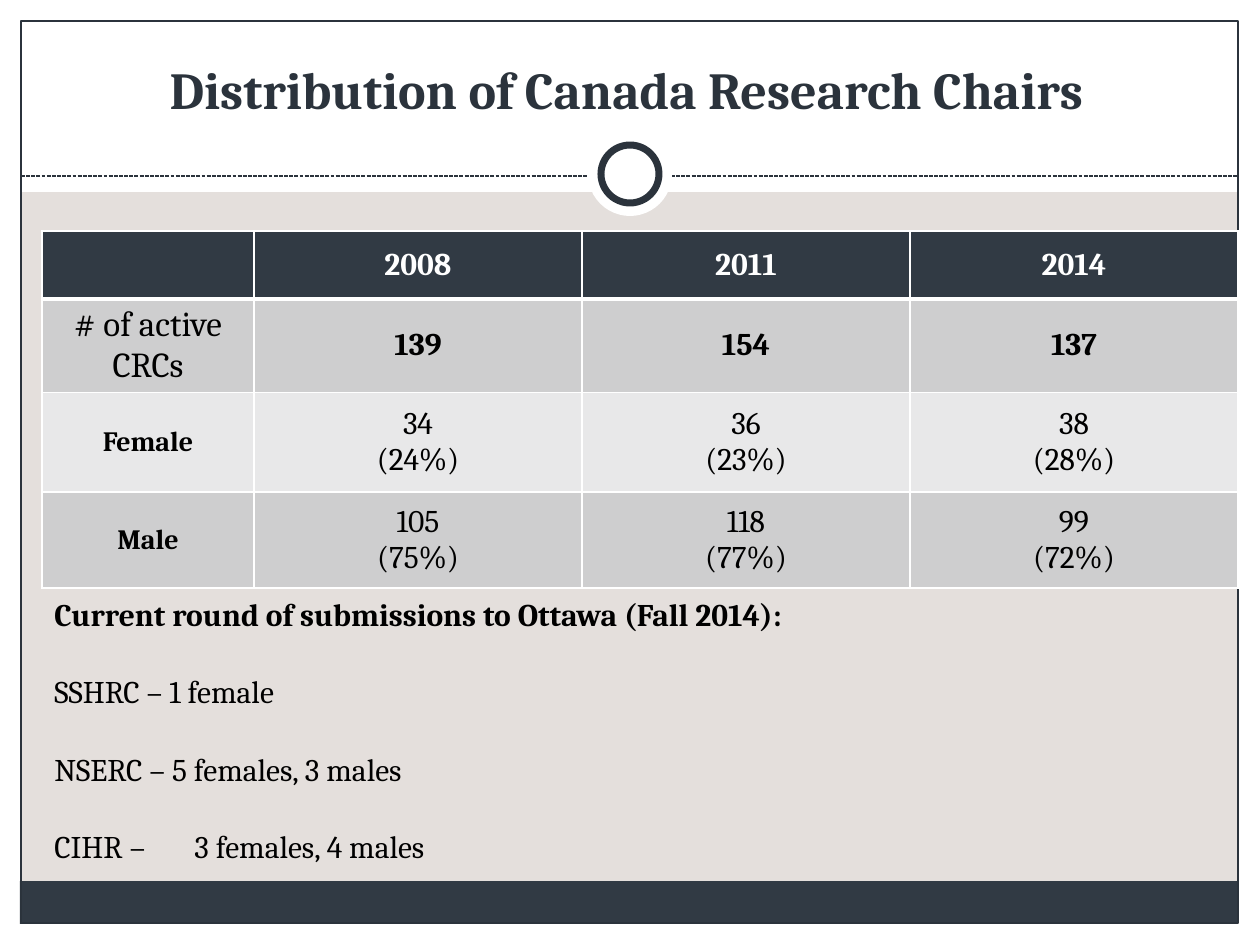
from lxml.etree import SubElement
from pptx import Presentation
from pptx.dml.color import RGBColor
from pptx.enum.dml import MSO_LINE
from pptx.enum.shapes import MSO_CONNECTOR, MSO_SHAPE
from pptx.enum.text import MSO_ANCHOR, PP_ALIGN
from pptx.oxml.ns import qn
from pptx.util import Pt

SCALE = 914400 / 126
THEME = {
    "font": "Cambria",
    "background": RGBColor.from_string("E4DFDC"),
    "white": RGBColor.from_string("FFFFFF"),
    "black": RGBColor.from_string("000000"),
    "dark": RGBColor.from_string("313A44"),
    "outline": RGBColor.from_string("2B333C"),
    "band": RGBColor.from_string("CECECF"),
    "light_band": RGBColor.from_string("E8E8E9"),
    "title_size": 29.7,
    "label_size": 20,
    "body_size": 18,
    "small_size": 16,
}


def px(*lengths):
    return [round(length * SCALE) for length in lengths]


def write_text(frame, lines, size, color, bold, alignment):
    frame.text = "\n".join(lines)
    formats = {"name": THEME["font"], "size": Pt(size), "bold": bold}
    for paragraph in frame.paragraphs:
        paragraph.alignment = alignment
        for run in paragraph.runs:
            run.font.color.rgb = THEME[color]
            for name, value in formats.items():
                setattr(run.font, name, value)


presentation = Presentation()
presentation.slide_width, presentation.slide_height = px(1260, 945)
slide = presentation.slides.add_slide(presentation.slide_layouts[5])
slide.background.fill.solid()
slide.background.fill.fore_color.rgb = THEME["background"]

rectangle, ellipse = MSO_SHAPE.RECTANGLE, MSO_SHAPE.OVAL
decorations = [
    (rectangle, (0, 924, 1260, 21), "white", 0),
    (rectangle, (0, 0, 1260, 192), "white", 0),
    (rectangle, (0, 0, 21, 945), "white", 0),
    (rectangle, (1239, 0, 21, 945), "white", 0),
    (rectangle, (20, 881, 1218, 43), "dark", 0),
    (rectangle, (21, 21, 1217, 902), None, 0.75),
    ("divider", (21, 176, 1239, 176), None, 0.75),
    (ellipse, (588, 132, 84, 84), "white", 0),
    (ellipse, (601, 145, 58, 58), "white", 4),
]
for kind, place, fill, line_width in decorations:
    if kind == "divider":
        shape = slide.shapes.add_connector(MSO_CONNECTOR.STRAIGHT, *px(*place))
        shape.line.dash_style = MSO_LINE.SQUARE_DOT
        SubElement(shape._element.spPr, qn("a:effectLst"))
    else:
        shape = slide.shapes.add_shape(kind, *px(*place))
        shape.shadow.inherit = False
        if fill:
            shape.fill.solid()
            shape.fill.fore_color.rgb = THEME[fill]
        else:
            shape.fill.background()
    if line_width:
        shape.line.color.rgb = THEME["outline"]
        shape.line.width = Pt(line_width)
    else:
        shape.line.fill.background()

title = slide.shapes.title
title.left, title.top, title.width, title.height = px(39, 21, 1176, 105)
slide.shapes._spTree.append(title._element)
write_text(title.text_frame, ["Distribution of Canada Research Chairs"],
           THEME["title_size"], "outline", True, PP_ALIGN.CENTER)
title.text_frame.vertical_anchor = MSO_ANCHOR.BOTTOM

rows = [
    ["", "2008", "2011", "2014"],
    ["# of active CRCs", "139", "154", "137"],
    ["Female", "34\n(24%)", "36\n(23%)", "38\n(28%)"],
    ["Male", "105\n(75%)", "118\n(77%)", "99\n(72%)"],
]
row_heights = [68, 93, 100, 96]
row_fills = ["dark", "band", "light_band", "band"]
label_sizes = [THEME[name] for name in ("body_size", "label_size", "small_size", "small_size")]
column_widths = [212, 328, 328, 328]
table = slide.shapes.add_table(
    4, 4, *px(42, 231, sum(column_widths), sum(row_heights))).table
for column, width in zip(table.columns, column_widths):
    column.width = px(width)[0]

for row_index, values in enumerate(rows):
    table.rows[row_index].height = px(row_heights[row_index])[0]
    for column_index, value in enumerate(values):
        cell = table.cell(row_index, column_index)
        is_label = column_index == 0
        size = label_sizes[row_index] if is_label else THEME["body_size"]
        bold = row_index != 1 if is_label else row_index < 2
        color = "black" if row_index else "white"
        write_text(cell.text_frame, value.split("\n"), size, color, bold, PP_ALIGN.CENTER)
        cell.vertical_anchor = MSO_ANCHOR.MIDDLE
        for side in "LRTB":
            thick = (row_index, side) in [(0, "B"), (1, "T")]
            border = SubElement(cell._tc.get_or_add_tcPr(), qn(f"a:ln{side}"),
                                w=str(Pt(3 if thick else 1)))
            border_fill = SubElement(border, qn("a:solidFill"))
            SubElement(border_fill, qn("a:srgbClr"), val=str(THEME["white"]))
        cell.fill.solid()
        cell.fill.fore_color.rgb = THEME[row_fills[row_index]]

submissions = slide.shapes.add_textbox(*px(42, 589, 1187, 280)).text_frame
submissions.word_wrap = True
submission_lines = [
    "Current round of submissions to Ottawa (Fall 2014):",
    "SSHRC – 1 female",
    "NSERC – 5 females, 3 males",
    "CIHR –\t3 females, 4 males",
]
write_text(submissions, submission_lines, THEME["body_size"], "black", False, PP_ALIGN.LEFT)
heading, *council_lines = submissions.paragraphs
heading.runs[0].font.bold = True
for paragraph in council_lines:
    paragraph.space_before = Pt(22.6)
tab_stops = SubElement(council_lines[-1]._p.get_or_add_pPr(), qn("a:tabLst"))
SubElement(tab_stops, qn("a:tab"), pos=str(px(140)[0]), algn="l")

presentation.save("out.pptx")
